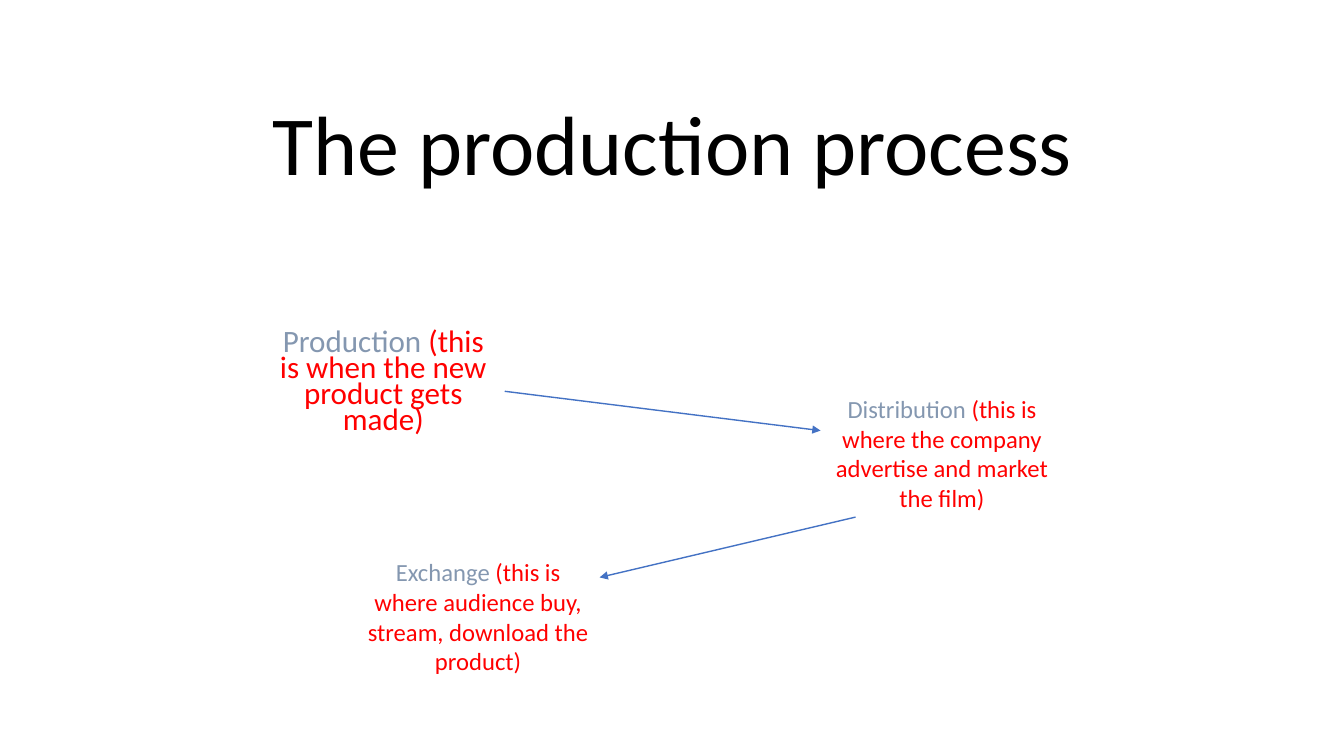
"""Build the slide that shows the three stages of the production process."""
from lxml.etree import SubElement
from pptx import Presentation
from pptx.dml.color import RGBColor
from pptx.enum.shapes import MSO_CONNECTOR
from pptx.enum.text import MSO_ANCHOR, PP_ALIGN
from pptx.oxml.ns import qn
from pptx.util import Cm, Pt

STAGE_WIDTH, STAGE_HEIGHT = 6.12, 3.23


def color(hex_string):
    return RGBColor.from_string(hex_string)


def add_run(paragraph, text, *, size, font, fill):
    run = paragraph.add_run()
    run.text = text
    run.font.size = Pt(size)
    run.font.name = font
    run.font.color.rgb = color(fill)


class ProcessSlide:
    font = "Calibri"
    title_color = "000000"
    stage_color = "8497B0"
    detail_color = "FF0000"
    arrow_color = "4472C4"

    def __init__(self, presentation):
        self.slide = presentation.slides.add_slide(presentation.slide_layouts[6])

    def text(self, left, top, width, height, runs, size, spacing=1.0, before=0,
             anchor=MSO_ANCHOR.TOP):
        shape = self.slide.shapes.add_textbox(Cm(left), Cm(top), Cm(width), Cm(height))
        frame = shape.text_frame
        frame.word_wrap = True
        frame.vertical_anchor = anchor
        paragraph = frame.paragraphs[0]
        paragraph.alignment = PP_ALIGN.CENTER
        paragraph.line_spacing = spacing
        paragraph.space_before = Pt(before)
        for words, fill in runs:
            add_run(paragraph, words, size=size, font=self.font, fill=fill)

    def title(self, words):
        self.text(6.15, 0.91, 21.59, 4.09, [(words, self.title_color)], 60,
                  spacing=0.9, anchor=MSO_ANCHOR.BOTTOM)

    def stage(self, left, top, name, detail, size=17.6, spacing=1.0, before=3.5):
        runs = [(name, self.stage_color), (f" ({detail})", self.detail_color)]
        self.text(left, top, STAGE_WIDTH, STAGE_HEIGHT, runs, size, spacing, before)

    def arrow(self, start, end):
        connector = self.slide.shapes.add_connector(
            MSO_CONNECTOR.STRAIGHT, *map(Cm, start + end))
        connector.line.color.rgb = color(self.arrow_color)
        connector.line.width = Pt(1)
        SubElement(connector.line._get_or_add_ln(), qn("a:tailEnd"), type="triangle")
        SubElement(connector._element.spPr, qn("a:effectLst"))


def main():
    presentation = Presentation()
    presentation.slide_width, presentation.slide_height = Cm(33.87), Cm(19.05)
    process = ProcessSlide(presentation)
    production_left, distribution_left, exchange_left = 6.6, 20.68, 8.99

    process.title("The production process")
    process.stage(production_left, 8.23, "Production",
                  "this is when the new product gets made",
                  size=22.2, spacing=0.7, before=10)
    process.arrow((production_left + STAGE_WIDTH, 9.86), (distribution_left, 10.85))
    process.stage(distribution_left, 9.8, "Distribution",
                  "this is where the company advertise and market the film")
    process.arrow((21.56, 13.03), (exchange_left + STAGE_WIDTH, 14.55))
    process.stage(exchange_left, 13.92, "Exchange",
                  "this is where audience buy, stream, download the product")
    presentation.save("out.pptx")


if __name__ == "__main__":
    main()
